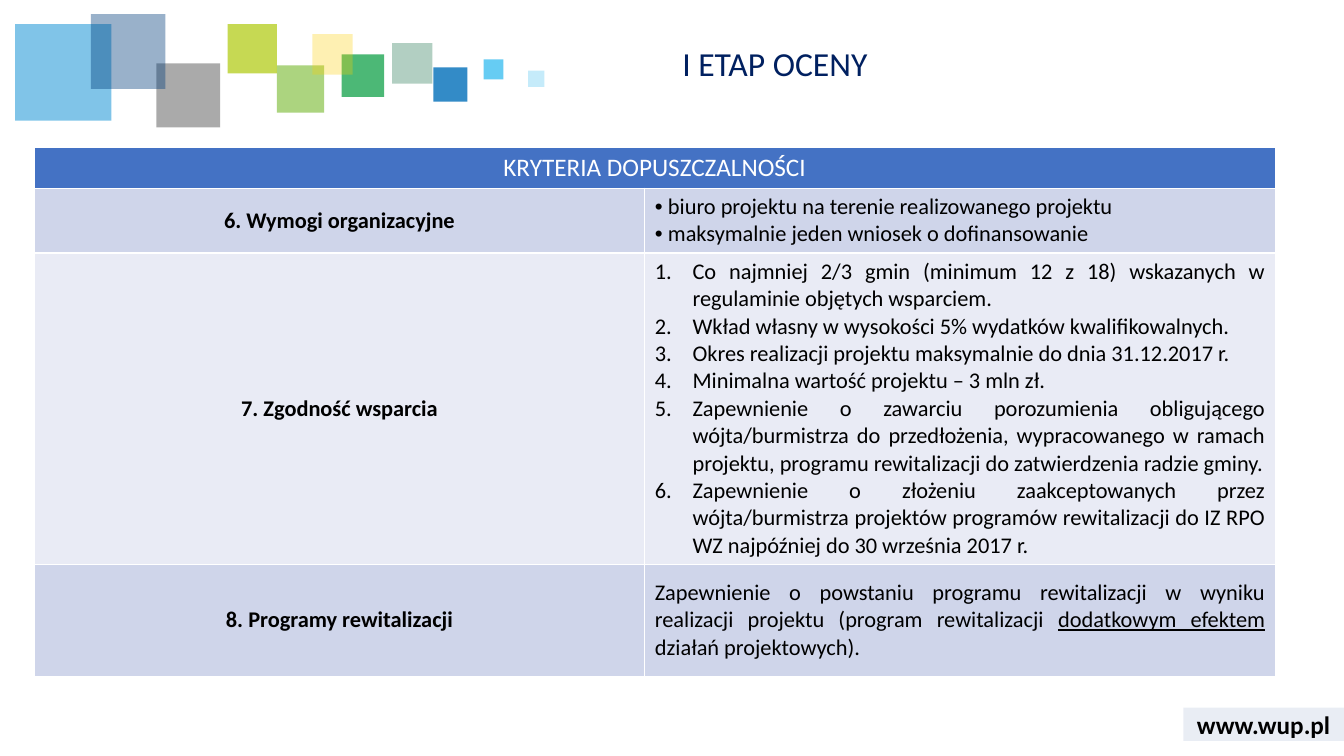
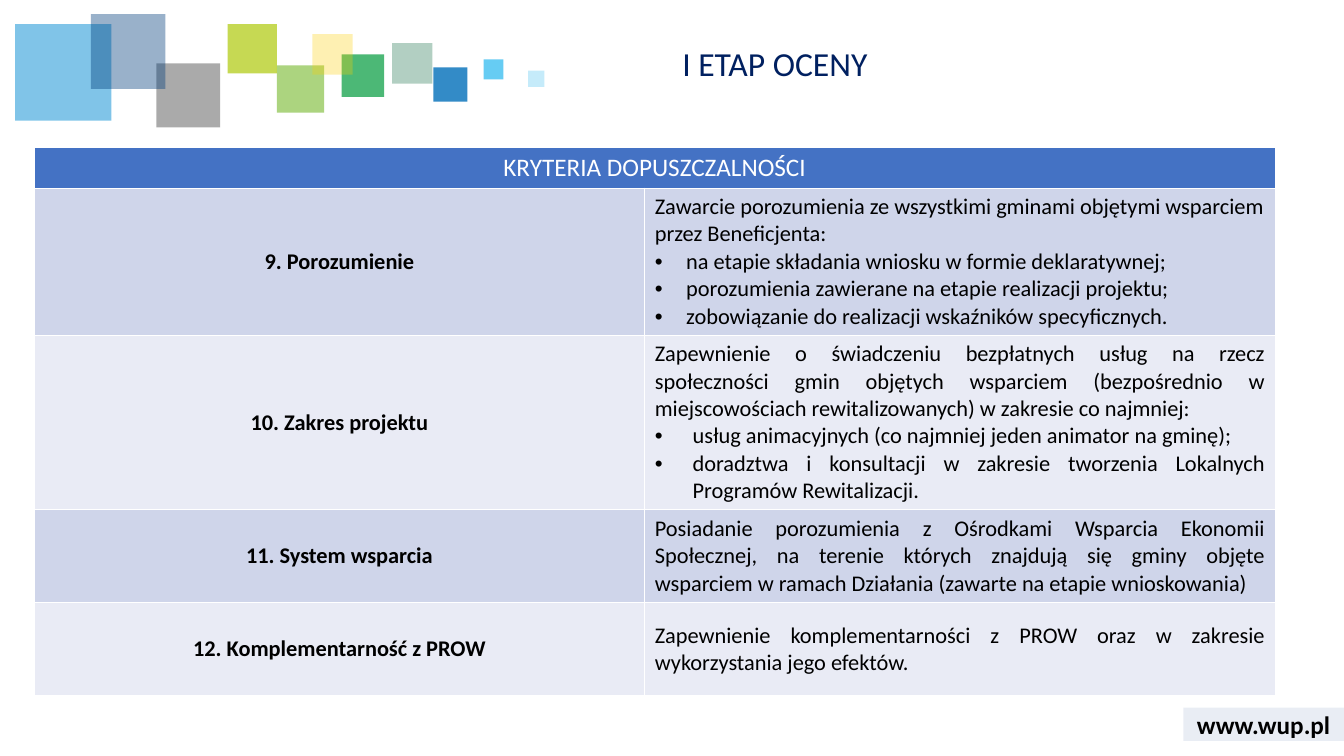
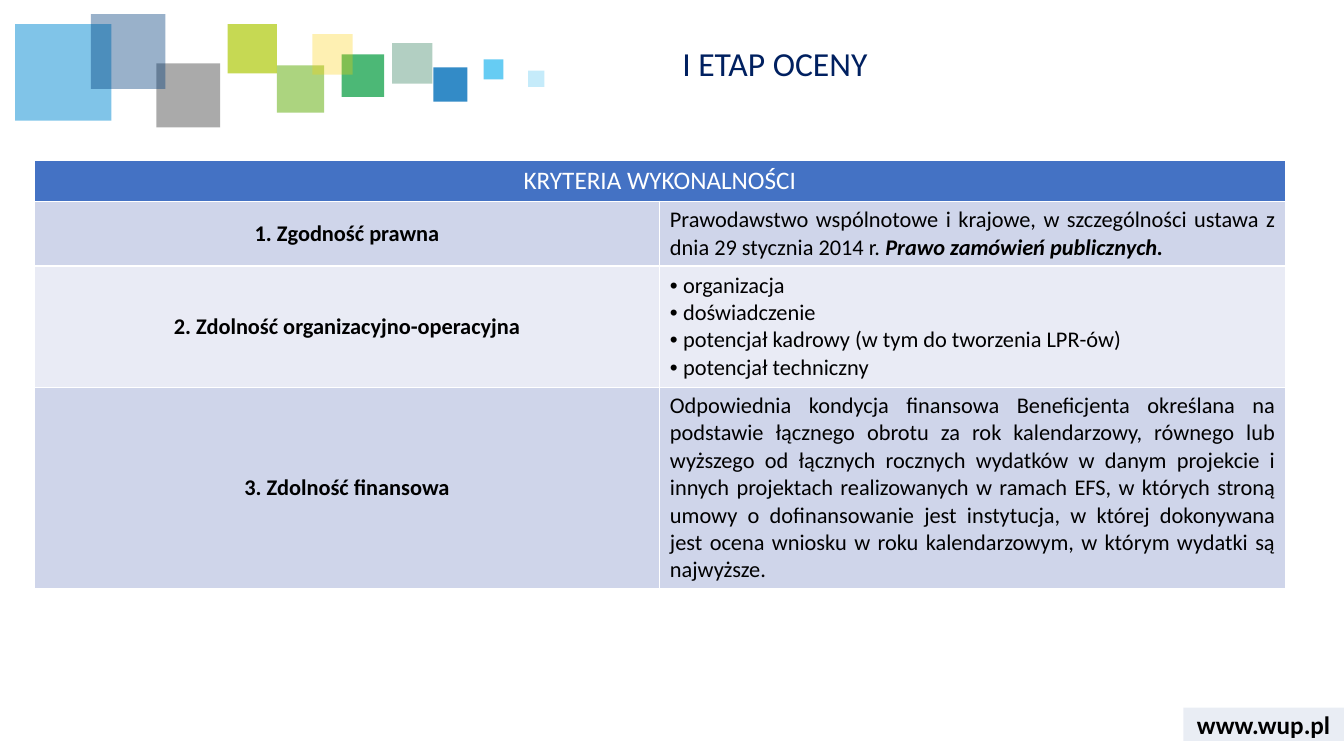
"""Builds three slides of project assessment criteria tables."""
from lxml import etree
from pptx import Presentation
from pptx import util as u
from pptx.dml.color import RGBColor
from pptx.enum import shapes, text
from pptx.oxml.ns import qn

INK = {"title": "002060", "head": "4472C4", "odd": "CFD5EA", "even": "E9EBF5",
       "white": "FFFFFF", "black": "000000", "band": "2F5597"}
FONT = "Calibri"
TITLE = "I ETAP OCENY"
SITE = "www.wup.pl"
BAND = (29.82, 17.83, 4.05, 0.84)
LEFT = 0.86
HEAD = 1.02

# left, top, side, colour, opacity in percent
SQUARES = [
    (9.88, 1.09, 1.02, "006138", 30),
    (10.92, 1.7, 0.86, "006EB9", 80),
    (8.61, 1.37, 1.07, "009A3C", 70),
    (0.38, 0.61, 2.43, "028BD3", 50),
    (6.98, 1.65, 1.19, "75B82A", 60),
    (3.94, 1.6, 1.61, "575757", 50),
    (2.29, 0.36, 1.88, "003D7C", 40),
    (12.19, 1.5, 0.5, "40C0F1", 80),
    (5.74, 0.61, 1.24, "AFCA0B", 70),
    (7.87, 0.86, 1.02, "FED000", 30),
    (13.31, 1.78, 0.41, "40C0F1", 30),
]

ALIGN = text.PP_ALIGN
KINDS = {
    "left": (None, 0, ALIGN.LEFT),
    "just": (None, 0, ALIGN.JUSTIFY),
    "dot": ("buChar", 0.33, ALIGN.LEFT),
    "mid": ("buChar", 0.79, ALIGN.LEFT),
    "wide": ("buChar", 0.95, ALIGN.JUSTIFY),
    "num": ("buAutoNum", 0.95, ALIGN.JUSTIFY),
}
MARKS = {"buChar": {"char": "•"}, "buAutoNum": {"type": "arabicPeriod"}}

SLIDES = [
    {"head": "KRYTERIA DOPUSZCZALNOŚCI", "top": 3.71, "cols": (15.39, 15.89), "rows": [
        ("6. Wymogi organizacyjne", 1.63, [
            ("dot", "biuro projektu na terenie realizowanego projektu"),
            ("dot", "maksymalnie jeden wniosek o dofinansowanie")]),
        ("7. Zgodność wsparcia", 7.84, [
            ("num", "Co najmniej 2/3 gmin (minimum 12 z 18) wskazanych w regulaminie objętych wsparciem."),
            ("num", "Wkład własny w wysokości 5% wydatków kwalifikowalnych."),
            ("num", "Okres realizacji projektu maksymalnie do dnia 31.12.2017 r."),
            ("num", "Minimalna wartość projektu – 3 mln zł."),
            ("num", "Zapewnienie o zawarciu porozumienia obligującego wójta/burmistrza do przedłożenia, "
                    "wypracowanego w ramach projektu, programu rewitalizacji do zatwierdzenia radzie gminy."),
            ("num", "Zapewnienie o złożeniu zaakceptowanych przez wójta/burmistrza projektów programów "
                    "rewitalizacji do IZ RPO WZ najpóźniej do 30 września 2017 r.")]),
        ("8. Programy rewitalizacji", 2.82, [
            ("just", "Zapewnienie o powstaniu programu rewitalizacji w wyniku realizacji projektu "
                     "(program rewitalizacji ",
             ("dodatkowym efektem ", {"under": True}), "działań projektowych).")]),
    ]},
    {"head": "KRYTERIA DOPUSZCZALNOŚCI", "top": 3.71, "cols": (15.39, 15.89), "rows": [
        ("9. Porozumienie", 3.71, [
            ("left", "Zawarcie porozumienia ze wszystkimi gminami objętymi wsparciem przez Beneficjenta:"),
            ("mid", "na etapie składania wniosku w formie deklaratywnej;"),
            ("mid", "porozumienia zawierane na etapie realizacji projektu;"),
            ("mid", "zobowiązanie do realizacji wskaźników specyficznych.")]),
        ("10. Zakres projektu", 4.39, [
            ("just", "Zapewnienie o świadczeniu bezpłatnych usług na rzecz społeczności gmin objętych "
                     "wsparciem (bezpośrednio w miejscowościach rewitalizowanych) w zakresie co najmniej:"),
            ("wide", "usług animacyjnych (co najmniej jeden animator na gminę);"),
            ("wide", "doradztwa i konsultacji w zakresie tworzenia Lokalnych Programów Rewitalizacji.")]),
        ("11. System wsparcia", 2.34, [
            ("just", "Posiadanie porozumienia z Ośrodkami Wsparcia Ekonomii Społecznej, na terenie których "
                     "znajdują się gminy objęte wsparciem w ramach Działania (zawarte na etapie wnioskowania)")]),
        ("12. Komplementarność z PROW", 2.34, [
            ("just", "Zapewnienie komplementarności z PROW oraz w zakresie wykorzystania jego efektów.")]),
    ]},
    {"head": "KRYTERIA WYKONALNOŚCI", "top": 4.04, "cols": (15.77, 15.77), "rows": [
        ("1. Zgodność prawna", 1.63, [
            ("just", "Prawodawstwo wspólnotowe i krajowe, w szczególności ustawa z dnia 29 stycznia 2014 r. ",
             ("Prawo zamówień publicznych.", {"bold": True, "slant": True}))]),
        ("2. Zdolność organizacyjno-operacyjna", 3.05, [
            ("dot", "organizacja"),
            ("dot", "doświadczenie"),
            ("dot", "potencjał kadrowy (w tym do tworzenia LPR-ów)"),
            ("dot", "potencjał techniczny")]),
        ("3. Zdolność finansowa", 5.08, [
            ("just", "Odpowiednia kondycja finansowa Beneficjenta określana na podstawie łącznego obrotu za rok "
                     "kalendarzowy, równego lub wyższego od łącznych rocznych wydatków w danym projekcie "
                     "i innych projektach realizowanych w ramach EFS, w których stroną umowy o dofinansowanie "
                     "jest instytucja, w której dokonywana jest ocena wniosku w roku kalendarzowym, w którym "
                     "wydatki są najwyższe.")]),
    ]},
]


def write(para, words, size=16, color="black", bold=False, slant=False, under=False, align=None):
    run = para.add_run()
    run.text = words
    font = run.font
    font.name, font.size = FONT, u.Pt(size)
    font.bold, font.italic, font.underline = bold, slant, under
    font.color.rgb = RGBColor.from_string(INK[color])
    if align is not None:
        para.alignment = align


def mark(para, tag, indent):
    props = para._p.get_or_add_pPr()
    props.set("marL", str(u.Cm(indent)))
    props.set("indent", str(-u.Cm(indent)))
    if tag == "buChar":
        etree.SubElement(props, qn("a:buFont")).set("typeface", "Arial")
    etree.SubElement(props, qn("a:" + tag), MARKS[tag])


def fill(cell, color):
    cell.fill.solid()
    cell.fill.fore_color.rgb = RGBColor.from_string(INK[color])


def block(slide, box, color, alpha):
    shape = slide.shapes.add_shape(shapes.MSO_SHAPE.RECTANGLE, *map(u.Cm, box))
    shape.shadow.inherit = False
    shape.line.fill.background()
    shape.fill.solid()
    shape.fill.fore_color.rgb = RGBColor.from_string(color)
    tint = shape._element.spPr.find(".//" + qn("a:srgbClr"))
    etree.SubElement(tint, qn("a:alpha")).set("val", str(alpha * 1000))
    return shape


def theme(layout, slide):
    for item in list(layout.placeholders):
        if item.placeholder_format.idx:
            item._element.getparent().remove(item._element)
    title = layout.placeholders[0]
    title.left, title.top, title.width, title.height = map(u.Cm, (16.94, 1.07, 16.15, 1.4))
    title.text_frame.vertical_anchor = text.MSO_ANCHOR.TOP
    parts = [block(slide, (x, y, side, side), color, alpha) for x, y, side, color, alpha in SQUARES]
    band = block(slide, BAND, INK["band"], 10)
    frame = band.text_frame
    frame.margin_top = frame.margin_bottom = 0
    frame.vertical_anchor = text.MSO_ANCHOR.MIDDLE
    write(frame.paragraphs[0], SITE, size=18, bold=True, align=ALIGN.CENTER)
    for part in parts + [band]:
        layout.shapes._spTree.append(part._element)


def detail(cell, paras):
    frame = cell.text_frame
    for i, (kind, *runs) in enumerate(paras):
        para = frame.add_paragraph() if i else frame.paragraphs[0]
        tag, indent, align = KINDS[kind]
        if tag:
            mark(para, tag, indent)
        for run in runs:
            words, style = (run, {}) if isinstance(run, str) else run
            write(para, words, align=align, **style)


def grid(slide, data):
    rows, cols = data["rows"], data["cols"]
    highs = [HEAD] + [row[1] for row in rows]
    box = map(u.Cm, (LEFT, data["top"], sum(cols), sum(highs)))
    table = slide.shapes.add_table(len(highs), len(cols), *box).table
    for col, wide in zip(table.columns, cols):
        col.width = u.Cm(wide)
    for row, high in zip(table.rows, highs):
        row.height = u.Cm(high)
    head = table.cell(0, 0)
    head.merge(table.cell(0, 1))
    fill(head, "head")
    write(head.text_frame.paragraphs[0], data["head"], size=18, color="white", align=ALIGN.CENTER)
    for i, (name, _, paras) in enumerate(rows, 1):
        pair = table.cell(i, 0), table.cell(i, 1)
        for cell in pair:
            fill(cell, "odd" if i % 2 else "even")
            cell.vertical_anchor = text.MSO_ANCHOR.MIDDLE
        write(pair[0].text_frame.paragraphs[0], name, bold=True, align=ALIGN.CENTER)
        detail(pair[1], paras)


def main():
    deck = Presentation()
    deck.slide_width, deck.slide_height = u.Cm(33.87), u.Cm(19.05)
    layout = deck.slide_layouts[5]
    for i, data in enumerate(SLIDES):
        slide = deck.slides.add_slide(layout)
        if not i:
            theme(layout, slide)
        para = slide.shapes.title.text_frame.paragraphs[0]
        para.line_spacing = 0.9
        write(para, TITLE, size=24, color="title", align=ALIGN.LEFT)
        grid(slide, data)
    deck.save("out.pptx")


if __name__ == "__main__":
    main()
